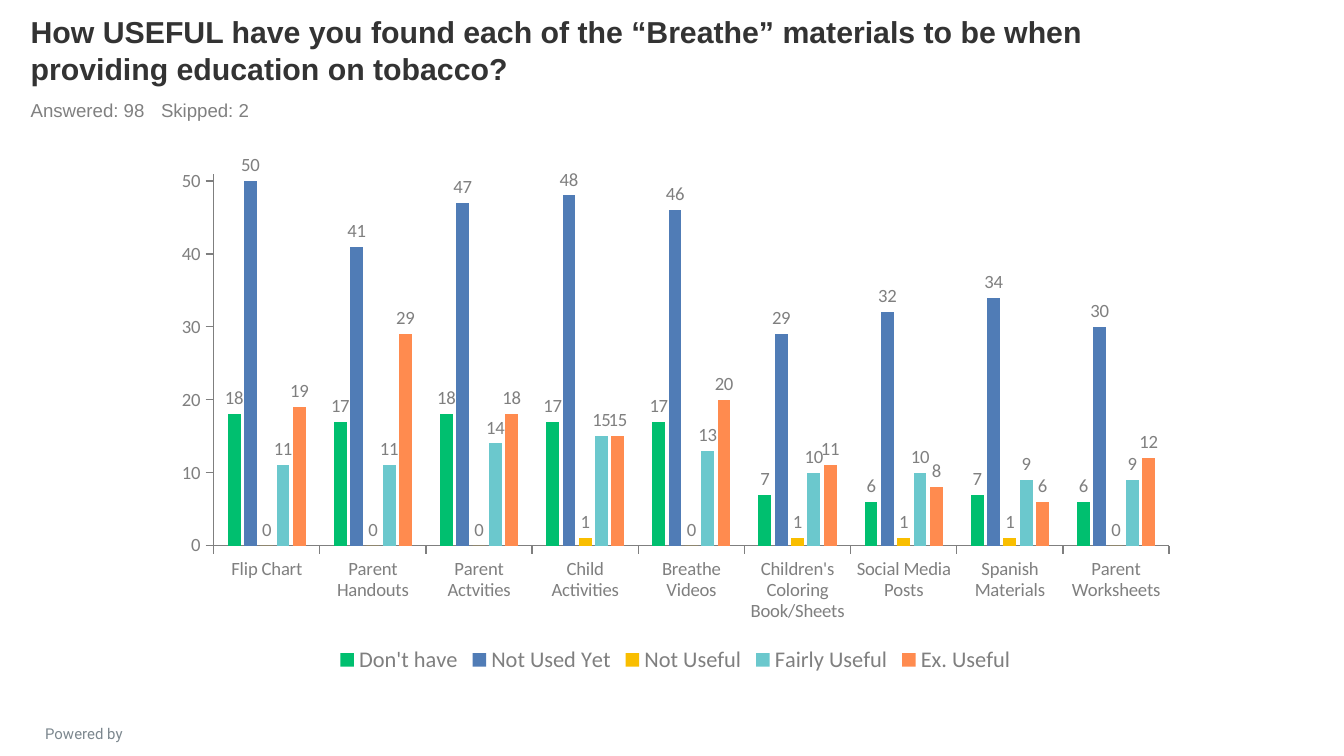
from lxml import etree
from pptx import Presentation
from pptx.chart.data import CategoryChartData
from pptx.dml.color import RGBColor
from pptx.enum.chart import (XL_CHART_TYPE as ChartType, XL_LABEL_POSITION as LabelPosition,
                             XL_LEGEND_POSITION as LegendPosition, XL_TICK_LABEL_POSITION as TickLabels,
                             XL_TICK_MARK as TickMark)
from pptx.enum.text import MSO_ANCHOR as Anchor, PP_ALIGN as Align
from pptx.oxml import parse_xml
from pptx.oxml.ns import nsdecls, qn
from pptx.util import Inches, Pt

DARK = RGBColor(0x33, 0x33, 0x33)
GRAY = RGBColor(0x80, 0x80, 0x80)
AXIS_GRAY = RGBColor(0x7F, 0x7F, 0x7F)
SLATE = RGBColor(0x7C, 0x87, 0x8E)

# Content
TITLE = "How USEFUL have you found each of the “Breathe” materials to be when providing education on tobacco?"
COUNTS = "Answered: 98\tSkipped: 2"
FOOTER = "Powered by"
MATERIALS = ["Flip Chart", "Parent Handouts", "Parent Actvities", "Child Activities",
             "Breathe Videos", "Children's Coloring Book/Sheets", "Social Media Posts",
             "Spanish Materials", "Parent Worksheets"]
RATINGS = [
    ("Don't have", RGBColor(0x00, 0xBF, 0x6F), (18, 17, 18, 17, 17, 7, 6, 7, 6)),
    ("Not Used Yet", RGBColor(0x50, 0x7C, 0xB6), (50, 41, 47, 48, 46, 29, 32, 34, 30)),
    ("Not Useful", RGBColor(0xF9, 0xBE, 0x00), (0, 0, 0, 1, 0, 1, 1, 1, 0)),
    ("Fairly Useful", RGBColor(0x6B, 0xC8, 0xCD), (11, 11, 14, 15, 13, 10, 10, 9, 9)),
    ("Ex. Useful", RGBColor(0xFF, 0x8B, 0x4F), (19, 29, 18, 15, 20, 11, 8, 6, 12)),
]

# Chart frame, and the plot area inside it, in inches
CHART_LEFT, CHART_TOP, CHART_WIDTH, CHART_HEIGHT = 1.2, 1.15, 7.65, 3.9
PLOT_LEFT, PLOT_TOP, PLOT_WIDTH, PLOT_HEIGHT = 0.39, 0.14, 7.11, 2.77


def style_font(font, size, color, name="Calibri", bold=False):
    font.size, font.name, font.bold = Pt(size), name, bold
    font.color.rgb = color


def add_text(page, text, frame, size, color, name, bold=False,
             anchor=Anchor.TOP, align=Align.LEFT, tab=None):
    box = page.shapes.add_textbox(*map(Inches, frame))
    box.text_frame.word_wrap = True
    box.text_frame.vertical_anchor = anchor
    box.text_frame.text = text
    para = box.text_frame.paragraphs[0]
    para.alignment = align
    if tab:
        stops = etree.SubElement(para._p.get_or_add_pPr(), qn("a:tabLst"))
        etree.SubElement(stops, qn("a:tab"), pos=str(Inches(tab)), algn="l")
    for span in para.runs:
        style_font(span.font, size, color, name, bold)


def style_axis(axis):
    axis.has_major_gridlines = False
    axis.major_tick_mark = TickMark.OUTSIDE
    axis.minor_tick_mark = TickMark.NONE
    axis.format.line.color.rgb = AXIS_GRAY
    axis.format.line.width = Pt(0.75)
    style_font(axis.tick_labels.font, 10, AXIS_GRAY)


def place_plot(chart):
    plot_area = chart._chartSpace.chart.plotArea
    for old in plot_area.findall(qn("c:layout")):
        plot_area.remove(old)
    fractions = {"x": PLOT_LEFT / CHART_WIDTH, "y": PLOT_TOP / CHART_HEIGHT,
                 "w": PLOT_WIDTH / CHART_WIDTH, "h": PLOT_HEIGHT / CHART_HEIGHT}
    modes = "".join(f'<c:{side}Mode val="edge"/>' for side in "xy")
    sizes = "".join(f'<c:{key} val="{value}"/>' for key, value in fractions.items())
    plot_area.insert(0, parse_xml(
        f'<c:layout {nsdecls("c")}><c:manualLayout><c:layoutTarget val="inner"/>'
        f'{modes}{sizes}</c:manualLayout></c:layout>'))


def add_ratings_chart(page):
    data = CategoryChartData(number_format="0")
    data.categories = MATERIALS
    for name, _, values in RATINGS:
        data.add_series(name, values)
    frame = map(Inches, (CHART_LEFT, CHART_TOP, CHART_WIDTH, CHART_HEIGHT))
    chart = page.shapes.add_chart(ChartType.COLUMN_CLUSTERED, *frame, data).chart
    style_font(chart.font, 18, DARK)
    chart.has_title = False
    place_plot(chart)

    # Axes
    style_axis(chart.category_axis)
    chart.category_axis.tick_label_position = TickLabels.LOW
    style_axis(chart.value_axis)
    chart.value_axis.minimum_scale = 0
    chart.value_axis.maximum_scale = 51
    chart.value_axis.major_unit = 10
    chart.value_axis.tick_labels.number_format = "0"
    chart.value_axis.tick_labels.number_format_is_linked = False

    # Legend
    chart.has_legend = True
    chart.legend.position = LegendPosition.BOTTOM
    chart.legend.include_in_layout = False
    style_font(chart.legend.font, 12, AXIS_GRAY)

    # Columns and their labels
    plot = chart.plots[0]
    plot.gap_width, plot.overlap, plot.vary_by_categories = 219, -27, False
    for series, (_, color, _) in zip(plot.series, RATINGS):
        series.invert_if_negative = False
        series.format.fill.solid()
        series.format.fill.fore_color.rgb = color
        labels = series.data_labels
        labels.show_value = True
        labels.number_format, labels.number_format_is_linked = "0", False
        labels.position = LabelPosition.OUTSIDE_END
        style_font(labels.font, 10, AXIS_GRAY)


def main():
    deck = Presentation()
    # Widescreen, 16:9
    deck.slide_width = Inches(10)
    deck.slide_height = deck.slide_width * 9 // 16
    page = deck.slides.add_slide(deck.slide_layouts[6])
    add_text(page, FOOTER, (0.05, 5.34, 1.15, 0.18), 8, SLATE, "Roboto", align=Align.CENTER)
    add_text(page, TITLE, (0.13, 0.09, 9, 0.6), 16.2, DARK, "Arial", bold=True, anchor=Anchor.BOTTOM)
    add_text(page, COUNTS, (0.13, 0.69, 9, 0.26), 10, GRAY, "Arial", tab=0.97)
    add_ratings_chart(page)
    deck.save("out.pptx")


if __name__ == "__main__":
    main()
